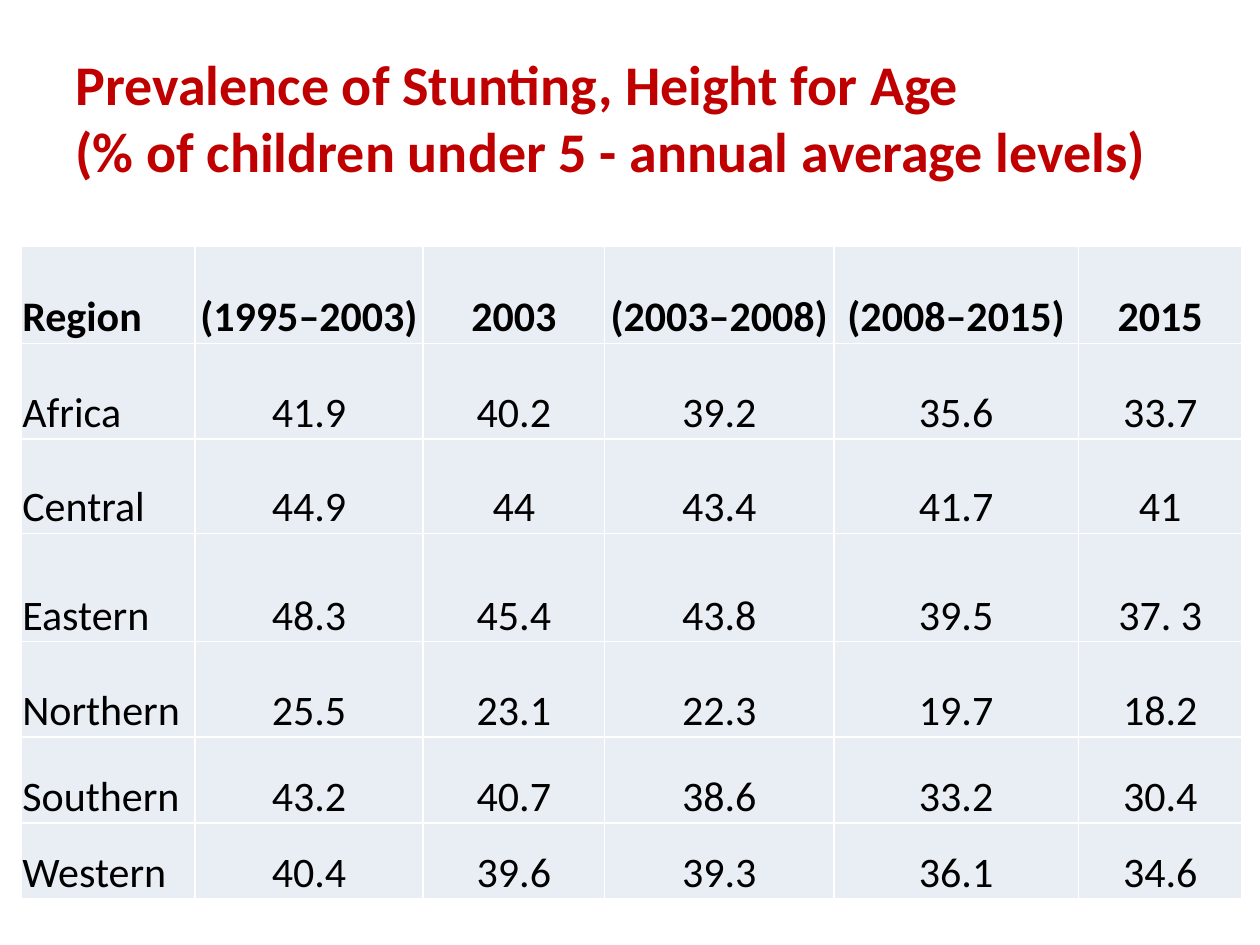
from lxml import etree
from pptx import Presentation
from pptx.dml.color import RGBColor
from pptx.enum.text import MSO_ANCHOR, PP_ALIGN
from pptx.oxml.ns import qn
from pptx.util import Cm, Pt

RED = RGBColor(0xC0, 0x00, 0x00)
BLACK = RGBColor(0x00, 0x00, 0x00)
WHITE = RGBColor(0xFF, 0xFF, 0xFF)
PALE_BLUE = RGBColor(0xE9, 0xED, 0xF4)
MIDDLE, BOTTOM = MSO_ANCHOR.MIDDLE, MSO_ANCHOR.BOTTOM
LEFT, CENTER = PP_ALIGN.LEFT, PP_ALIGN.CENTER
FONT = "Calibri"

TITLE_LINES = [
    "Prevalence of Stunting, Height for Age",
    "(% of children under 5 - annual average levels)",
]
STUNTING = [
    ["Region", "(1995–2003)", "2003", "(2003–2008)", "(2008–2015)", "2015"],
    ["Africa", "41.9", "40.2", "39.2", "35.6", "33.7"],
    ["Central", "44.9", "44", "43.4", "41.7", "41"],
    ["Eastern", "48.3", "45.4", "43.8", "39.5", "37. 3"],
    ["Northern", "25.5", "23.1", "22.3", "19.7", "18.2"],
    ["Southern", "43.2", "40.7", "38.6", "33.2", "30.4"],
    ["Western", "40.4", "39.6", "39.3", "36.1", "34.6"],
]
COLUMN_WIDTHS = [3.51, 4.6, 3.66, 4.62, 4.93, 3.3]
ROW_HEIGHTS = [1.96, 1.93, 1.9, 2.18, 1.93, 1.73, 1.52]


def add_span(para, text, size, color, bold):
    span = para.add_run()
    span.text = text
    span.font.name = FONT
    span.font.size = Pt(size)
    span.font.bold = bold
    span.font.color.rgb = color


def add_borders(cell, color, width):
    properties = cell._tc.get_or_add_tcPr()
    for side in ("a:lnL", "a:lnR", "a:lnT", "a:lnB"):
        line = etree.SubElement(properties, qn(side), w=str(width))
        fill = etree.SubElement(line, qn("a:solidFill"))
        etree.SubElement(fill, qn("a:srgbClr"), val=str(color))


deck = Presentation()
deck.slide_width = Cm(25.4)
deck.slide_height = Cm(19.05)
page = deck.slides.add_slide(deck.slide_layouts[6])

# Title
box = page.shapes.add_textbox(Cm(1.27), Cm(0.76), Cm(22.86), Cm(3.18))
box.text_frame.word_wrap = True
box.text_frame.vertical_anchor = MIDDLE
para = box.text_frame.paragraphs[0]
for number, line in enumerate(TITLE_LINES):
    if number:
        para.add_line_break()
    add_span(para, line, 32, RED, True)

# Table of regions by period
table = page.shapes.add_table(
    len(STUNTING), len(COLUMN_WIDTHS), Cm(0.42), Cm(4.96),
    Cm(sum(COLUMN_WIDTHS)), Cm(sum(ROW_HEIGHTS)),
).table
for column, width in zip(table.columns, COLUMN_WIDTHS):
    column.width = Cm(width)
for row, height in zip(table.rows, ROW_HEIGHTS):
    row.height = Cm(height)

for row_index, values in enumerate(STUNTING):
    for column_index, value in enumerate(values):
        cell = table.cell(row_index, column_index)
        cell.margin_left = cell.margin_right = cell.margin_top = Cm(0.03)
        cell.margin_bottom = 0
        cell.vertical_anchor = BOTTOM
        add_borders(cell, WHITE, Pt(1))
        cell.fill.solid()
        cell.fill.fore_color.rgb = PALE_BLUE
        para = cell.text_frame.paragraphs[0]
        para.alignment = CENTER if column_index else LEFT
        add_span(para, value, 24, BLACK, row_index == 0)

deck.save("out.pptx")
